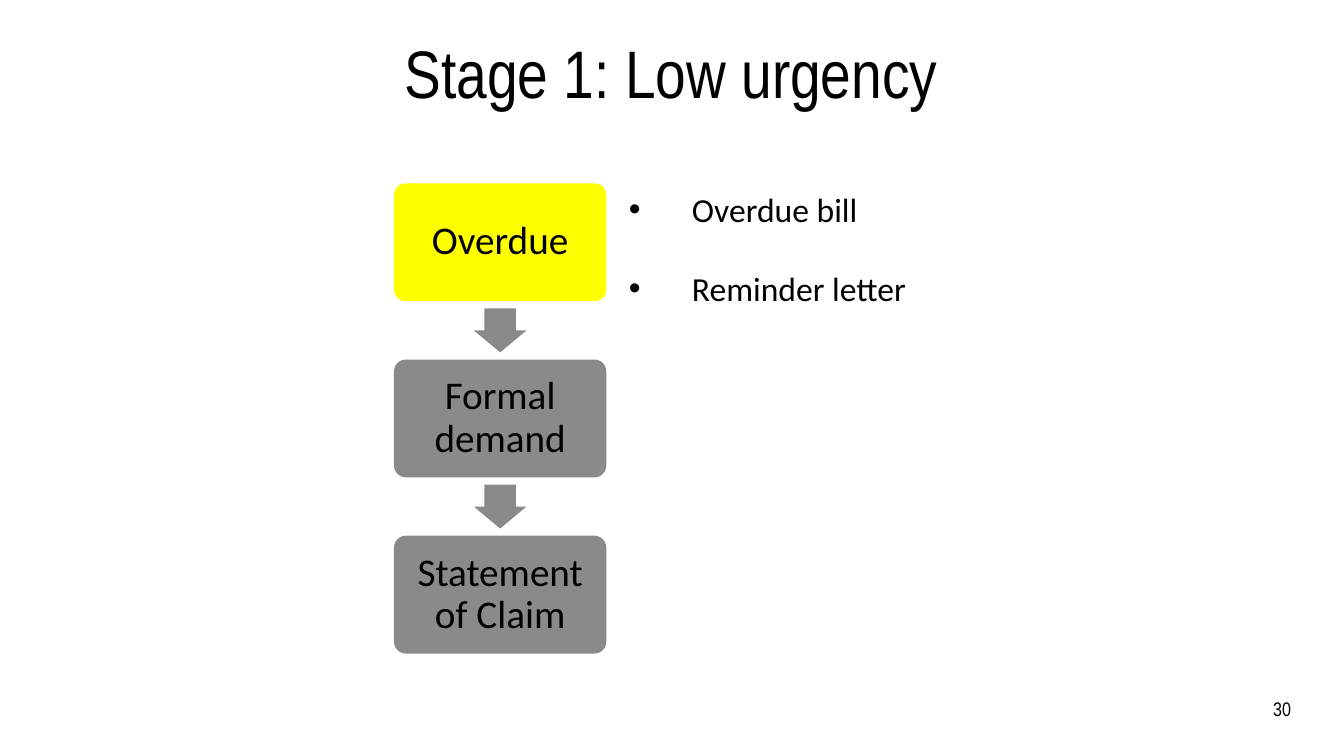
from dataclasses import dataclass

from lxml import etree
from pptx import Presentation
from pptx import util as u
from pptx.dml import color
from pptx.enum import shapes, text
from pptx.oxml import ns

BLACK, YELLOW, GREY = "000000", "FFFF00", "898A89"
STAGE_LEFT, STAGE_TOP = 9.93, 4.62
STAGE_WIDTH, STAGE_HEIGHT, STAGE_PITCH = 5.35, 2.97, 4.44
ARROW_WIDTH, ARROW_HEIGHT = 1.33, 1.11
BULLET_INDENT = 1.59


@dataclass
class Stage:
    label: str
    fill: str


STAGES = [
    Stage("Overdue", YELLOW),
    Stage("Formal demand", GREY),
    Stage("Statement of Claim", GREY),
]
ACTIONS = ["Overdue bill", "Reminder letter"]


def rgb(value: str) -> color.RGBColor:
    return color.RGBColor.from_string(value)


def add_bullet(paragraph) -> None:
    properties = paragraph._p.get_or_add_pPr()
    properties.set("marL", str(u.Cm(BULLET_INDENT)))
    properties.set("indent", str(-u.Cm(BULLET_INDENT)))
    font = etree.SubElement(properties, ns.qn("a:buFont"))
    font.set("typeface", "Arial")
    bullet = etree.SubElement(properties, ns.qn("a:buChar"))
    bullet.set("char", "•")


def write(shape, lines: list[str], *, font: str, size: float,
          align=text.PP_ALIGN.LEFT, anchor=text.MSO_ANCHOR.TOP,
          margins: tuple[float, float] = (0, 0), line_spacing: float = 1.0,
          gap: float = 0, bullets: bool = False) -> None:
    frame = shape.text_frame
    frame.word_wrap = True
    frame.auto_size = text.MSO_AUTO_SIZE.NONE
    frame.vertical_anchor = anchor
    frame.margin_left = frame.margin_right = u.Cm(margins[0])
    frame.margin_top = frame.margin_bottom = u.Cm(margins[1])
    for index, line in enumerate(lines):
        paragraph = frame.add_paragraph() if index else frame.paragraphs[0]
        paragraph.text = line
        if bullets:
            add_bullet(paragraph)
        paragraph.alignment = align
        paragraph.line_spacing = line_spacing
        paragraph.space_before = u.Pt(gap if index else 0)
        paragraph.font.name = font
        paragraph.font.size = u.Pt(size)
        paragraph.font.color.rgb = rgb(BLACK)


def add_block(slide, kind, left: float, top: float, width: float,
              height: float, fill: str, adjustments: list[float]):
    shape = slide.shapes.add_shape(
        kind, u.Cm(left), u.Cm(top), u.Cm(width), u.Cm(height))
    shape.shadow.inherit = False
    shape.fill.solid()
    shape.fill.fore_color.rgb = rgb(fill)
    shape.line.fill.background()
    for index, value in enumerate(adjustments):
        shape.adjustments[index] = value
    return shape


def add_stage(slide, stage: Stage, top: float) -> None:
    box = add_block(slide, shapes.MSO_SHAPE.ROUNDED_RECTANGLE, STAGE_LEFT, top,
                    STAGE_WIDTH, STAGE_HEIGHT, stage.fill, [0.1])
    write(box, [stage.label], font="Calibri", size=28,
          align=text.PP_ALIGN.CENTER, anchor=text.MSO_ANCHOR.MIDDLE,
          margins=(0.4, 0.4), line_spacing=0.9)


def add_arrow(slide, stage_top: float) -> None:
    left = STAGE_LEFT + (STAGE_WIDTH - ARROW_WIDTH) / 2
    top = stage_top + (STAGE_HEIGHT + STAGE_PITCH - ARROW_HEIGHT) / 2
    add_block(slide, shapes.MSO_SHAPE.DOWN_ARROW, left, top,
              ARROW_WIDTH, ARROW_HEIGHT, GREY, [0.6, 0.5])


def main() -> None:
    presentation = Presentation()
    presentation.slide_width = u.Cm(33.87)
    presentation.slide_height = u.Cm(19.05)
    slide = presentation.slides.add_slide(presentation.slide_layouts[5])

    title = slide.shapes.title
    title.left, title.top = u.Cm(1.32), u.Cm(1.02)
    title.width, title.height = u.Cm(31.19), u.Cm(1.85)
    write(title, ["Stage 1: Low urgency"], font="Arial Narrow", size=48,
          align=text.PP_ALIGN.CENTER, line_spacing=0.9)

    for index, stage in enumerate(STAGES):
        top = STAGE_TOP + index * STAGE_PITCH
        add_stage(slide, stage, top)
        if index < len(STAGES) - 1:
            add_arrow(slide, top)

    actions = slide.shapes.add_textbox(
        u.Cm(15.6), u.Cm(STAGE_TOP), u.Cm(16.94), u.Cm(3.33))
    write(actions, ACTIONS, font="Calibri", size=24, margins=(0.25, 0.13),
          gap=28, bullets=True)

    page_number = slide.shapes.add_textbox(
        u.Cm(31.55), u.Cm(17.55), u.Cm(0.99), u.Cm(0.61))
    write(page_number, ["30"], font="Arial Narrow", size=14,
          align=text.PP_ALIGN.RIGHT, anchor=text.MSO_ANCHOR.BOTTOM)

    presentation.save("out.pptx")


if __name__ == "__main__":
    main()
